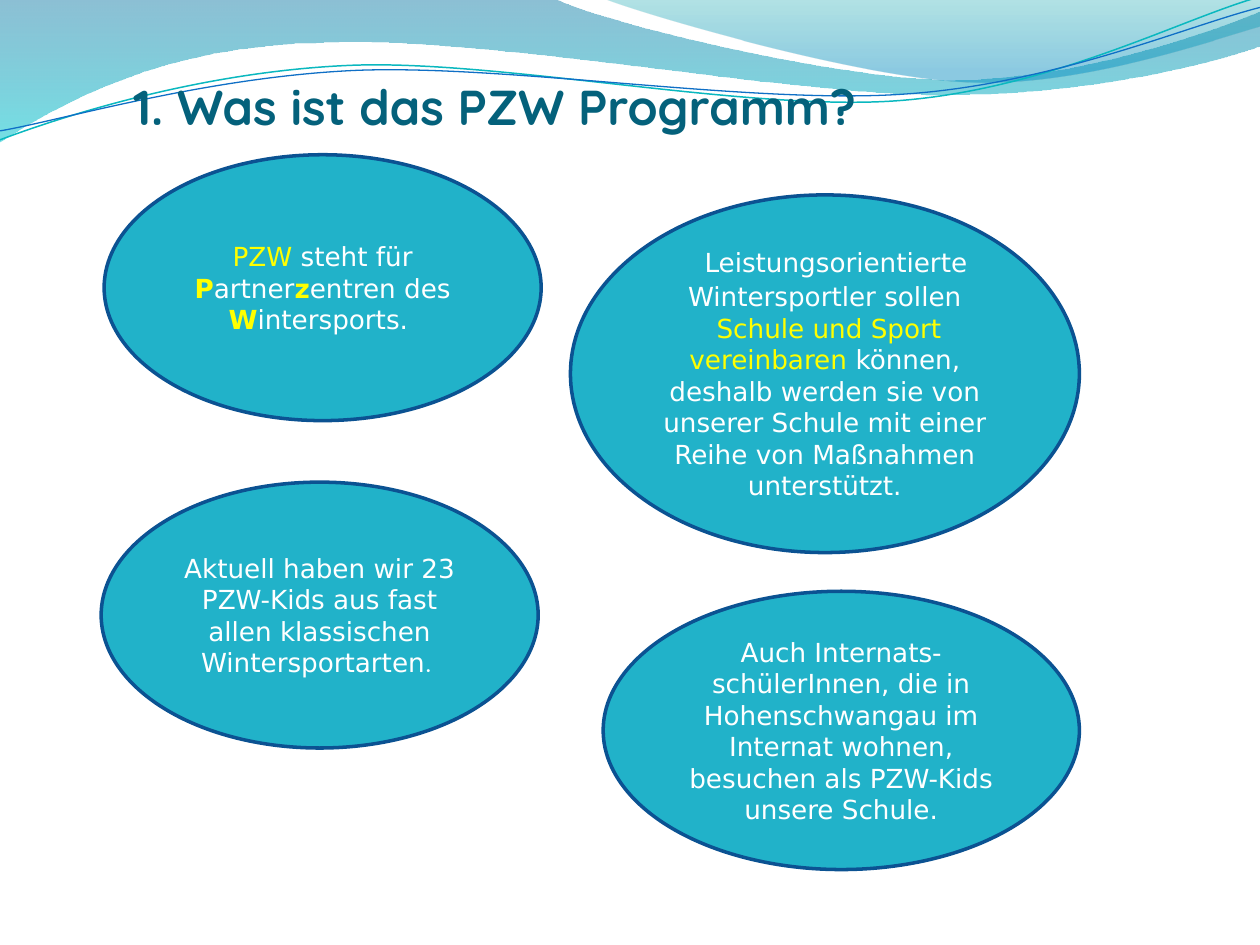
import dataclasses
import math

import lxml.etree
import pptx
import pptx.dml.color
import pptx.enum.shapes
import pptx.enum.text
import pptx.oxml.ns
import pptx.util

Cm = pptx.util.Cm
Pt = pptx.util.Pt
Color = pptx.dml.color.RGBColor.from_string
qn = pptx.oxml.ns.qn


@dataclasses.dataclass(frozen=True)
class Theme:
    title: str = "04617B"
    oval: str = "21B2C9"
    border: str = "0B5292"
    body: str = "FFFFFF"
    accent: str = "FFFF00"
    title_font: str = "Quicksand"
    body_font: str = "DejaVu Sans"
    serif_font: str = "TeX Gyre Pagella"
    title_size: int = 28
    body_size: int = 15
    wave: tuple = ((0, "0074A1", 45), (1, "00C6CF", 55))
    crest: tuple = ((0, "00A1A9", 30), (0.8, "008BBF", 45))
    teal_line: str = "0AB8BF"
    blue_line: str = "0F6FC6"


theme = Theme()
presentation = pptx.Presentation()
presentation.slide_width = Cm(25.4)
presentation.slide_height = Cm(19.05)
slide = presentation.slides.add_slide(presentation.slide_layouts[6])


def add_curve(box, rotation, start, segments, close):
    left, top, width, height = box
    builder = slide.shapes.build_freeform(Cm(left), Cm(top))
    builder.add_line_segments([(Cm(left + width), Cm(top + height))], close=False)
    shape = builder.convert_to_shape()
    shape.shadow.inherit = False
    shape.rotation = rotation
    outline = next(shape._element.iter(qn("a:path")))
    for child in list(outline):
        outline.remove(child)
    cosine, sine = math.cos(math.radians(rotation)), math.sin(math.radians(rotation))
    for index, points in enumerate([[start], *segments]):
        tag = "a:moveTo" if index == 0 else "a:lnTo" if len(points) == 1 else "a:cubicBezTo"
        command = lxml.etree.SubElement(outline, qn(tag))
        for x, y in points:
            across, down = x - left - width / 2, y - top - height / 2
            point = lxml.etree.SubElement(command, qn("a:pt"))
            point.set("x", str(Cm(width / 2 + across * cosine + down * sine)))
            point.set("y", str(Cm(height / 2 - across * sine + down * cosine)))
    if close:
        lxml.etree.SubElement(outline, qn("a:close"))
    return shape


def format_run(run, font, size, color, bold=False):
    run.font.name = font
    run.font.size = Pt(size)
    run.font.color.rgb = Color(color)
    run.font.bold = bold


bands = [
    ((-0.03, -0.03, 25.46, 2.9), (0, -0.03), [
        [(11.18, -0.03)],
        [(12.09, 0.43), (16.87, 1.6), (19.25, 1.6)],
        [(21.67, 1.6), (24.33, 0.66), (25.4, 0.23)],
        [(25.43, 0.91)],
        [(24.97, 1.12), (22.1, 1.93), (18.95, 1.91)],
        [(15.8, 1.91), (9.7, 0.71), (6.53, 0.86)],
        [(3.28, 0.89), (1.17, 2.11), (-0.03, 2.87)],
    ], theme.wave),
    ((12.17, -0.03, 13.23, 1.78), (12.17, -0.03), [
        [(12.93, 0.28), (17.32, 1.57), (19.53, 1.65)],
        [(21.74, 1.75), (24.41, 0.81), (25.4, 0.53)],
        [(25.4, 0)],
    ], theme.crest),
]
for box, start, segments, gradient in bands:
    band = add_curve(box, 0, start, segments, True)
    band.line.fill.background()
    band.fill.gradient()
    band.fill.gradient_angle = 270
    for stop, (position, color, opacity) in zip(band.fill.gradient_stops, gradient):
        stop.position = position
        stop.color.rgb = Color(color)
    color_elements = list(band.fill._xPr.iter(qn("a:srgbClr")))
    for element, (position, color, opacity) in zip(color_elements, gradient):
        lxml.etree.SubElement(element, qn("a:alpha")).set("val", str(opacity * 1000))

ripples = [
    ((-0.05, 0.56, 25.45, 1.8), (0, 2.82), [
        [(1.22, 2.36), (4.01, 1.45), (7.04, 1.32)],
        [(10.03, 1.19), (15.06, 2.26), (18.11, 2.03)],
        [(21.16, 1.8), (23.83, 0.38), (25.35, -0.05)],
    ], theme.teal_line, 0.85),
    ((-0.05, 0.76, 25.48, 1.47), (0, 2.64), [
        [(1.19, 2.44), (4.17, 1.55), (7.19, 1.42)],
        [(10.24, 1.3), (15.16, 2.11), (18.21, 1.9)],
        [(21.23, 1.7), (23.9, 0.53), (25.4, 0.15)],
    ], theme.blue_line, 0.75),
]
for box, start, segments, color, width in ripples:
    ripple = add_curve(box, 357.3, start, segments, False)
    ripple.fill.background()
    ripple.line.color.rgb = Color(color)
    ripple.line.width = Pt(width)

title = slide.shapes.add_textbox(Cm(2.69), Cm(0.53), Cm(19), Cm(2.2))
title_frame = title.text_frame
title_frame.word_wrap = True
title_frame.vertical_anchor = pptx.enum.text.MSO_ANCHOR.BOTTOM
title_frame.margin_left = title_frame.margin_right = title_frame.margin_bottom = 0
title_frame.text = "1. Was ist das PZW Programm?"
format_run(title_frame.paragraphs[0].runs[0], theme.title_font, theme.title_size, theme.title, True)

plain = (theme.body_font, theme.body_size, theme.body)
yellow = (theme.body_font, theme.body_size, theme.accent)
initial = (*yellow, True)
serif = (theme.serif_font, theme.body_size, theme.body)

ovals = [
    ((11.5, 3.93, 10.26, 7.21), [
        (0.45, 1.2, [("Leistungsorientierte", plain)]),
        (0, 0, [(" Wintersportler sollen ", plain)]),
        (0, 0, [
            (" Schule und Sport vereinbaren ", yellow),
            ("können, deshalb werden sie von unserer Schule mit einer "
             "Reihe von Maßnahmen unterstützt.", plain),
        ]),
    ]),
    ((2.1, 3.12, 8.81, 5.36), [
        (0, 0, [
            ("PZW", yellow), (" steht für ", plain),
            ("P", initial), ("artner", plain),
            ("z", initial), ("entren des ", plain),
            ("W", initial), ("intersports. ", plain),
        ]),
    ]),
    ((2.04, 9.72, 8.81, 5.36), [
        (0, 0, [
            ("Aktuell haben wir 23 PZW-Kids aus fast allen klassischen "
             "Wintersportarten", plain),
            (". ", serif),
        ]),
    ]),
    ((12.16, 11.92, 9.6, 5.61), [
        (0, 0, [
            ("Auch Internats-schülerInnen, die in Hohenschwangau im Internat "
             "wohnen, besuchen als PZW-Kids unsere Schule.", plain),
        ]),
    ]),
]
for box, paragraphs in ovals:
    oval = slide.shapes.add_shape(pptx.enum.shapes.MSO_SHAPE.OVAL, *map(Cm, box))
    oval.shadow.inherit = False
    oval.fill.solid()
    oval.fill.fore_color.rgb = Color(theme.oval)
    oval.line.color.rgb = Color(theme.border)
    oval.line.width = Pt(2)
    text_frame = oval.text_frame
    text_frame.word_wrap = True
    text_frame.vertical_anchor = pptx.enum.text.MSO_ANCHOR.MIDDLE
    for index, (indent, space_after, runs) in enumerate(paragraphs):
        paragraph = text_frame.add_paragraph() if index else text_frame.paragraphs[0]
        paragraph.alignment = pptx.enum.text.PP_ALIGN.CENTER
        paragraph.space_after = Pt(space_after)
        if indent:
            paragraph._p.get_or_add_pPr().set("marL", str(Cm(indent)))
        for text, style in runs:
            run = paragraph.add_run()
            run.text = text
            format_run(run, *style)

presentation.save("out.pptx")
